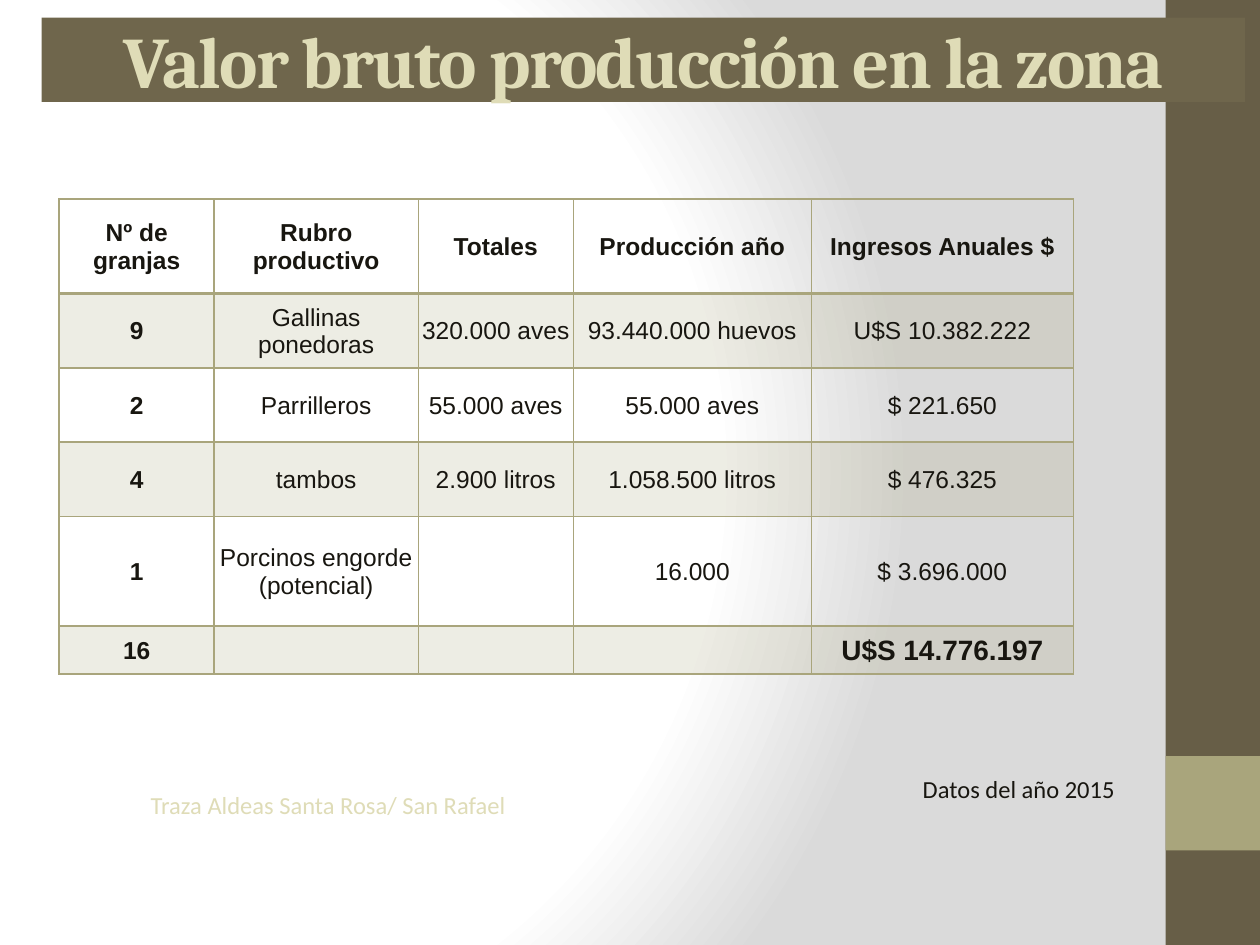
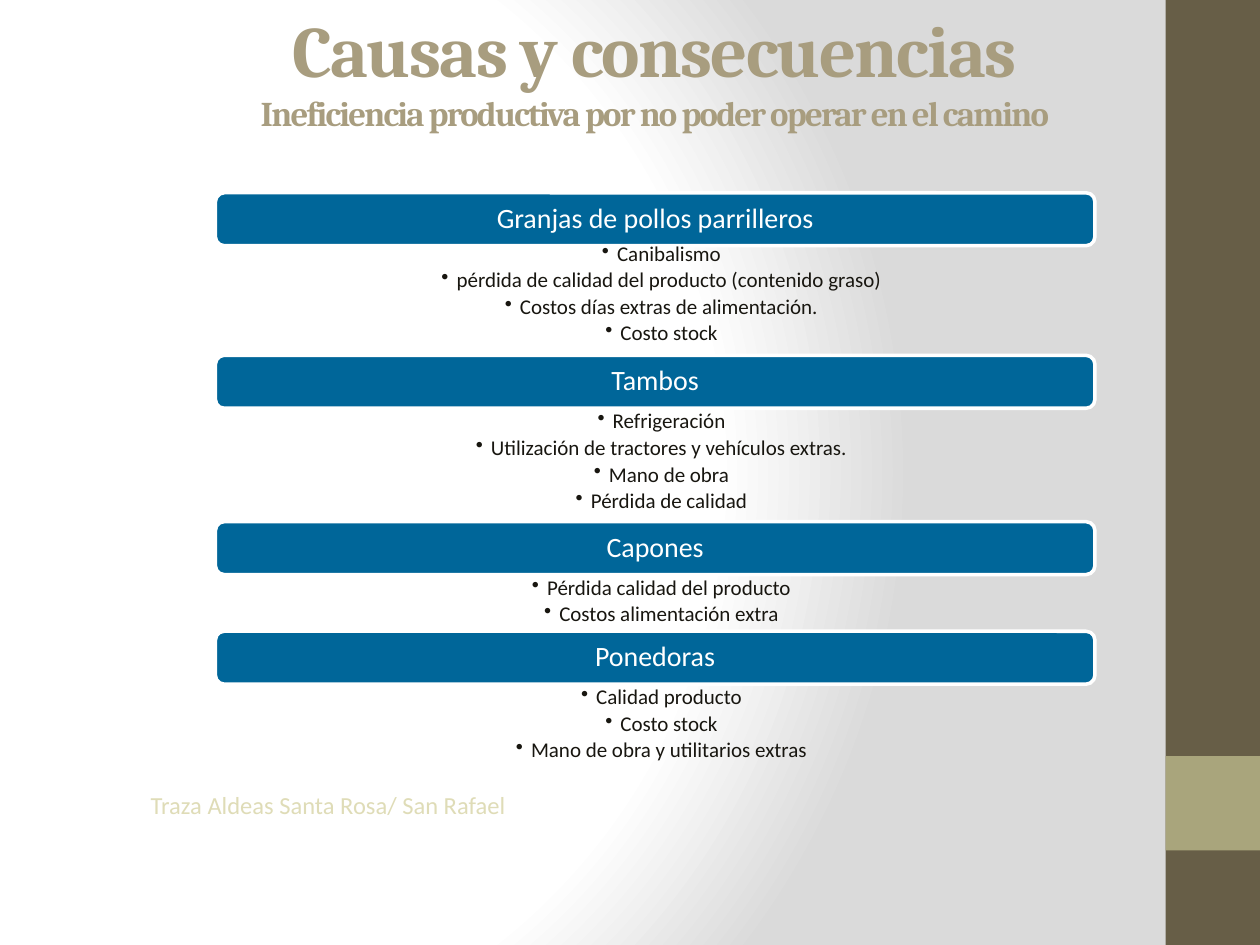
import pptx
import pptx.dml.color
import pptx.enum.shapes
import pptx.enum.text
import pptx.oxml
import pptx.oxml.ns
import pptx.util

Inches = pptx.util.Inches
Pt = pptx.util.Pt
RGBColor = pptx.dml.color.RGBColor
Shapes = pptx.enum.shapes.MSO_SHAPE
Anchor = pptx.enum.text.MSO_ANCHOR
CENTER = pptx.enum.text.PP_ALIGN.CENTER
qn = pptx.oxml.ns.qn

DARK_BROWN = RGBColor(0x67, 0x5E, 0x47)
TITLE_BROWN = RGBColor(0x6F, 0x66, 0x4C)
OLIVE = RGBColor(0xA9, 0xA5, 0x7C)
CREAM = RGBColor(0xDF, 0xDC, 0xB7)
TAN = RGBColor(0xA8, 0x9D, 0x7F)
INK = RGBColor(0x18, 0x16, 0x10)
BLUE = RGBColor(0x00, 0x66, 0x99)
WHITE = RGBColor(0xFF, 0xFF, 0xFF)
GRAY = RGBColor(0xDA, 0xDA, 0xDA)

NAMESPACE = 'xmlns:a="http://schemas.openxmlformats.org/drawingml/2006/main"'
BACKGROUND = f"""<a:gradFill {NAMESPACE} rotWithShape="1"><a:gsLst>
<a:gs pos="0"><a:srgbClr val="{WHITE}"/></a:gs>
<a:gs pos="75000"><a:srgbClr val="{WHITE}"/></a:gs>
<a:gs pos="100000"><a:srgbClr val="{GRAY}"/></a:gs></a:gsLst>
<a:path path="circle"><a:fillToRect l="20000" t="50000" r="100000" b="50000"/></a:path>
</a:gradFill>"""

TITLE_FONT = {"name": "Cambria", "size": Pt(41.4), "bold": True}
SUBTITLE_FONT = {**TITLE_FONT, "size": Pt(19.8)}
NOTE_FONT = {"name": "Calibri", "size": Pt(14)}
BAR_FONT = {"name": "Calibri", "size": Pt(16)}
BULLET_FONT = {"name": "Calibri", "size": Pt(12)}
TABLE_FONT = {"name": "Arial", "size": Pt(14)}

COLUMN_WIDTHS = (1.23, 1.62, 1.23, 1.89, 2.08)
ROW_HEIGHTS = (0.75, 0.59, 0.59, 0.59, 0.87, 0.38)
PRODUCTION = (
    ("Nº de granjas", "Rubro productivo", "Totales", "Producción año", "Ingresos Anuales $"),
    ("9", "Gallinas ponedoras", "320.000 aves", "93.440.000 huevos", "U$S 10.382.222"),
    ("2", "Parrilleros", "55.000 aves", "55.000 aves", "$ 221.650"),
    ("4", "tambos", "2.900 litros", "1.058.500 litros", "$ 476.325"),
    ("1", "Porcinos engorde (potencial)", "", "16.000", "$ 3.696.000"),
    ("16", "", "", "", "U$S 14.776.197"),
)
CAUSES = (
    ("Granjas de pollos parrilleros", 1.53, 1.91,
     ("Canibalismo", "pérdida de calidad del producto (contenido graso)",
      "Costos días extras de alimentación.", "Costo stock")),
    ("Tambos", 2.82, 3.24,
     ("Refrigeración", "Utilización de tractores y vehículos extras.",
      "Mano de obra", "Pérdida de calidad")),
    ("Capones", 4.14, 4.56,
     ("Pérdida calidad del producto", "Costos alimentación extra")),
    ("Ponedoras", 5.01, 5.43,
     ("Calidad producto", "Costo stock", "Mano de obra y utilitarios extras")),
)


def apply(target, values):
    for name, value in values.items():
        setattr(target, name, value)


def margins(left, top, right, bottom):
    sides = {"left": left, "top": top, "right": right, "bottom": bottom}
    return {f"margin_{side}": Inches(value) for side, value in sides.items()}


class Deck:
    """Holds the shared style and the current slide, and draws elements on it."""

    def __init__(self):
        self.presentation = pptx.Presentation()
        apply(self.presentation, {"slide_width": Inches(10), "slide_height": Inches(7.5)})
        self.slide = None

    def new_slide(self):
        self.slide = self.presentation.slides.add_slide(self.presentation.slide_layouts[6])
        self.slide.background.fill.solid()
        solid = self.slide.element.find(f".//{qn('p:bgPr')}/{qn('a:solidFill')}")
        solid.getparent().replace(solid, pptx.oxml.parse_xml(BACKGROUND))
        self.box((9.25, 0, 0.75, 7.5), DARK_BROWN)
        self.box((9.25, 6, 0.75, 0.75), OLIVE)
        self.note("Traza Aldeas Santa Rosa/ San Rafael", (0.81, 6.19, 3.59, 0.77), CREAM)

    def box(self, place, fill=None, kind=Shapes.RECTANGLE, outline=None):
        place = [Inches(value) for value in place]
        if fill is None:
            return self.slide.shapes.add_textbox(*place)
        shape = self.slide.shapes.add_shape(kind, *place)
        shape.shadow.inherit = False
        shape.fill.solid()
        shape.fill.fore_color.rgb = fill
        if outline is None:
            shape.line.fill.background()
        else:
            shape.line.color.rgb = outline
            shape.line.width = Pt(2)
        return shape

    def frame(self, shape, insets, anchor=Anchor.TOP):
        frame = shape.text_frame
        apply(frame, {"word_wrap": True, "vertical_anchor": anchor, **margins(*insets)})
        frame.paragraphs[0].alignment = CENTER
        return frame

    def run(self, paragraph, text, font, color):
        run = paragraph.add_run()
        run.text = text
        apply(run.font, font)
        run.font.color.rgb = color
        return run

    def note(self, text, place, color):
        frame = self.frame(self.box(place), (0.08,) * 4)
        self.run(frame.paragraphs[0], text, NOTE_FONT, color)

    def title(self, text, place, color, fill=None, subtitle=None):
        frame = self.frame(self.box(place, fill), (0.1, 0.05, 0.1, 0.06), Anchor.MIDDLE)
        paragraph = frame.paragraphs[0]
        runs = [self.run(paragraph, text, TITLE_FONT, color)]
        if subtitle:
            paragraph.add_line_break()
            runs.append(self.run(paragraph, subtitle, SUBTITLE_FONT, color))
        for run in runs:
            run.font._element.set("spc", "-100")

    def bar(self, text, top):
        shape = self.box((1.71, top, 6.98, 0.42), BLUE, Shapes.ROUNDED_RECTANGLE, WHITE)
        frame = self.frame(shape, (0.07,) * 4, Anchor.MIDDLE)
        frame.paragraphs[0].line_spacing = 0.9
        self.run(frame.paragraphs[0], text, BAR_FONT, WHITE)

    def bullets(self, items, top):
        shape = self.box((1.71, top, 6.98, 0.23 * len(items)))
        frame = self.frame(shape, (0.22, 0.02, 0.12, 0.02))
        for index, item in enumerate(items):
            paragraph = frame.add_paragraph() if index else frame.paragraphs[0]
            properties = paragraph._p.get_or_add_pPr()
            properties.set("marL", str(Inches(0.12)))
            properties.set("indent", str(-Inches(0.12)))
            properties.append(pptx.oxml.parse_xml(f'<a:buChar {NAMESPACE} char="•"/>'))
            apply(paragraph, {"alignment": CENTER, "line_spacing": 0.9, "space_after": Pt(2.2)})
            self.run(paragraph, item, BULLET_FONT, INK)

    def cell(self, cell, text, font, shaded, top, bottom):
        apply(cell, {"vertical_anchor": Anchor.MIDDLE, **margins(0.01, 0.01, 0.01, 0)})
        cell.fill.background()
        properties = cell._tc.get_or_add_tcPr()
        if shaded:
            cell.fill.solid()
            cell.fill.fore_color.rgb = OLIVE
            color = properties.find(f".//{qn('a:srgbClr')}")
            color.append(pptx.oxml.parse_xml(f'<a:alpha {NAMESPACE} val="20000"/>'))
        widths = {"L": 1, "R": 1, "T": top, "B": bottom}
        for index, (side, width) in enumerate(widths.items()):
            properties.insert(index, pptx.oxml.parse_xml(
                f'<a:ln{side} {NAMESPACE} w="{Pt(width)}"><a:solidFill>'
                f'<a:srgbClr val="{OLIVE}"/></a:solidFill></a:ln{side}>'))
        paragraph = cell.text_frame.paragraphs[0]
        paragraph.alignment = CENTER
        if text:
            self.run(paragraph, text, font, INK)

    def table(self, rows, left, top):
        place = (left, top, sum(COLUMN_WIDTHS), sum(ROW_HEIGHTS))
        table = self.slide.shapes.add_table(
            len(rows), len(COLUMN_WIDTHS), *[Inches(value) for value in place]).table
        apply(table, {"first_row": False, "horz_banding": False})
        for column, width in zip(table.columns, COLUMN_WIDTHS):
            column.width = Inches(width)
        last = len(rows) - 1
        for index, (texts, height) in enumerate(zip(rows, ROW_HEIGHTS)):
            table.rows[index].height = Inches(height)
            for position, text in enumerate(texts):
                font = {**TABLE_FONT, "bold": index in (0, last) or position == 0}
                if index == last and position == len(texts) - 1:
                    font["size"] = Pt(16)
                self.cell(table.cell(index, position), text, font, index % 2 == 1,
                          top=2 if index == 1 else 1, bottom=2 if index == 0 else 1)


def main():
    deck = Deck()

    deck.new_slide()
    deck.note("Datos del año 2015", (6.29, 6.06, 3.59, 0.56), INK)
    deck.title("Valor bruto producción en la zona", (0.33, 0.14, 9.55, 0.67), CREAM, TITLE_BROWN)
    deck.table(PRODUCTION, 0.47, 1.58)

    deck.new_slide()
    for heading, bar_top, list_top, items in CAUSES:
        deck.bar(heading, bar_top)
        deck.bullets(items, list_top)
    deck.title("Causas y consecuencias", (0.42, 0.22, 9.55, 0.67), TAN,
               subtitle="Ineficiencia productiva por no poder operar en el camino")

    deck.presentation.save("out.pptx")


if __name__ == "__main__":
    main()
